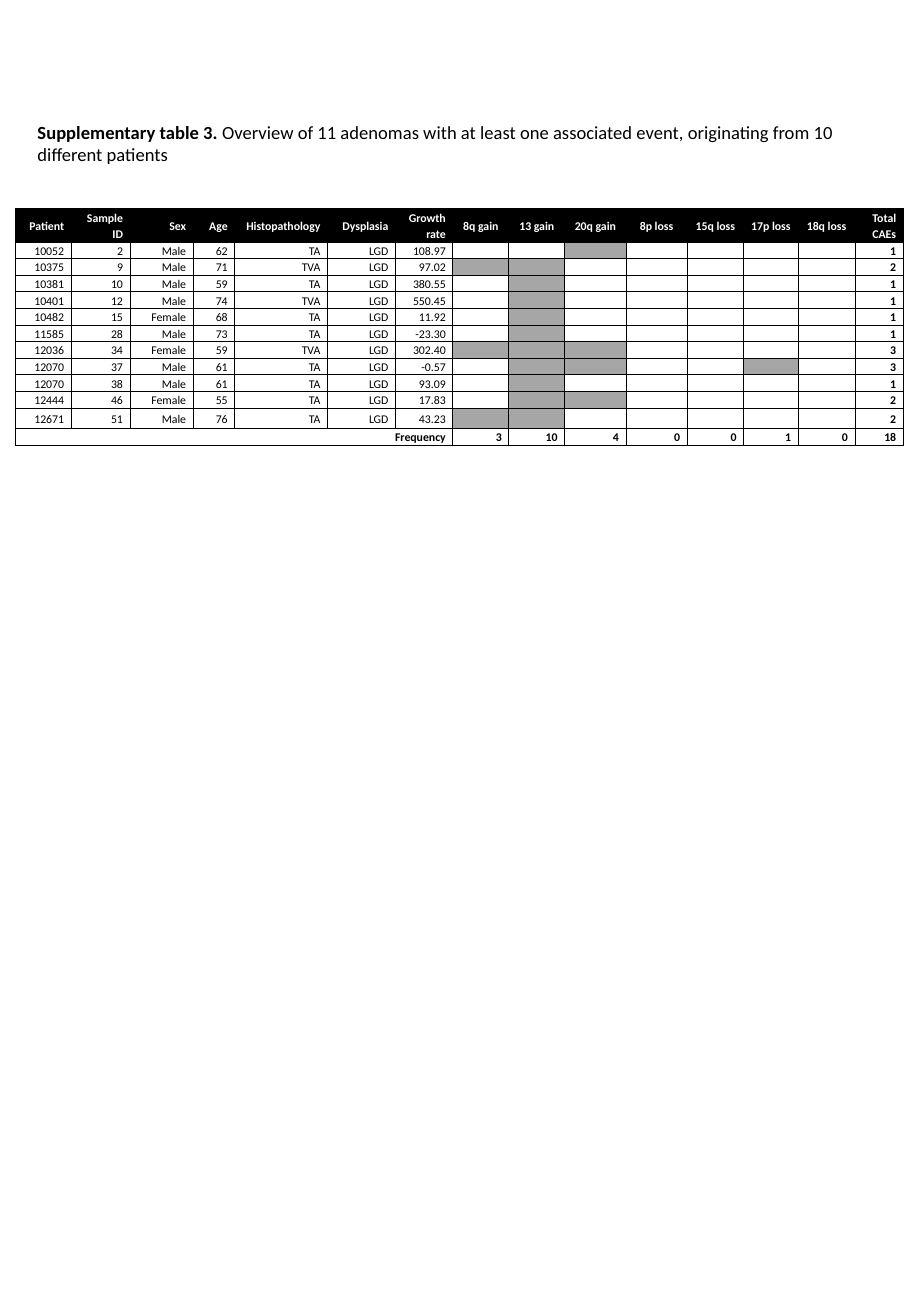
from lxml import etree
from pptx import Presentation
from pptx.dml.color import RGBColor
from pptx.enum.text import MSO_ANCHOR, MSO_AUTO_SIZE, PP_ALIGN
from pptx.oxml.ns import qn
from pptx.util import Cm, Pt

MIDDLE = MSO_ANCHOR.MIDDLE
NO_AUTOFIT = MSO_AUTO_SIZE.NONE
LEFT, CENTER, RIGHT = PP_ALIGN.LEFT, PP_ALIGN.CENTER, PP_ALIGN.RIGHT
TITLE_ONLY = 5

FONT = "Calibri"
BLACK, WHITE, GREY = "000000", "FFFFFF", "A6A6A6"

TITLE = [
    ("Supplementary table 3.", True),
    (" Overview of 11 adenomas with at least one associated event,"
     " originating from 10 different patients", False),
]
DETAILS = ["Patient", "Sample ID", "Sex", "Age", "Histopathology", "Dysplasia", "Growth rate"]
EVENTS = ["8q gain", "13 gain", "20q gain", "8p loss", "15q loss", "17p loss", "18q loss"]
TOTAL = "Total CAEs"
ADENOMAS = [
    (("10052", "2", "Male", "62", "TA", "LGD", "108.97"), ["20q gain"]),
    (("10375", "9", "Male", "71", "TVA", "LGD", "97.02"), ["8q gain", "13 gain"]),
    (("10381", "10", "Male", "59", "TA", "LGD", "380.55"), ["13 gain"]),
    (("10401", "12", "Male", "74", "TVA", "LGD", "550.45"), ["13 gain"]),
    (("10482", "15", "Female", "68", "TA", "LGD", "11.92"), ["13 gain"]),
    (("11585", "28", "Male", "73", "TA", "LGD", "-23.30"), ["13 gain"]),
    (("12036", "34", "Female", "59", "TVA", "LGD", "302.40"), ["8q gain", "13 gain", "20q gain"]),
    (("12070", "37", "Male", "61", "TA", "LGD", "-0.57"), ["13 gain", "20q gain", "17p loss"]),
    (("12070", "38", "Male", "61", "TA", "LGD", "93.09"), ["13 gain"]),
    (("12444", "46", "Female", "55", "TA", "LGD", "17.83"), ["13 gain", "20q gain"]),
    (("12671", "51", "Male", "76", "TA", "LGD", "43.23"), ["8q gain", "13 gain"]),
]
COLUMN_WIDTHS = [1.17, 1.23, 1.32, 0.87, 1.94, 1.42, 1.2, 1.17, 1.17, 1.28, 1.28, 1.18, 1.14,
                 1.19, 1.01]
HEADER_HEIGHT, ROW_HEIGHT, LAST_ADENOMA_HEIGHT = 0.7, 0.34, 0.43


def color(value):
    return RGBColor.from_string(value)


def add_borders(cell):
    properties = cell._tc.get_or_add_tcPr()
    for side in ("a:lnL", "a:lnR", "a:lnT", "a:lnB"):
        line = etree.SubElement(properties, qn(side), w=str(Pt(0.5)))
        fill = etree.SubElement(line, qn("a:solidFill"))
        etree.SubElement(fill, qn("a:srgbClr"), val=BLACK)


def format_cell(cell, text, fill, bold, font_color, alignment):
    add_borders(cell)
    if fill:
        cell.fill.solid()
        cell.fill.fore_color.rgb = color(fill)
    else:
        cell.fill.background()
    cell.margin_left = cell.margin_right = Cm(0.15)
    cell.margin_top = cell.margin_bottom = 0
    cell.vertical_anchor = MIDDLE
    paragraph = cell.text_frame.paragraphs[0]
    paragraph.alignment = alignment
    paragraph.line_spacing = 1.15
    font = paragraph.font
    font.name, font.size, font.bold = FONT, Pt(7), bold
    font.color.rgb = color(font_color)
    if text:
        paragraph.add_run().text = text
    else:
        paragraph._p.get_or_add_endParaRPr().set("sz", "700")


def add_title(slide):
    title = slide.shapes.title
    title.left, title.top, title.width, title.height = Cm(0.53), Cm(2.39), Cm(17.8), Cm(1.19)
    frame = title.text_frame
    frame.auto_size = NO_AUTOFIT
    frame.word_wrap = True
    frame.vertical_anchor = MIDDLE
    paragraph = frame.paragraphs[0]
    paragraph.alignment = LEFT
    paragraph.font.name, paragraph.font.size = FONT, Pt(11)
    paragraph.font.color.rgb = color(BLACK)
    for text, bold in TITLE:
        run = paragraph.add_run()
        run.text = text
        run.font.bold = bold


def table_rows():
    rows = [DETAILS + EVENTS + [TOTAL]]
    for details, events in ADENOMAS:
        rows.append([*details, *[""] * len(EVENTS), str(len(events))])
    counts = [sum(event in events for _, events in ADENOMAS) for event in EVENTS]
    frequency = ["Frequency"] + [""] * (len(DETAILS) - 1)
    rows.append(frequency + [str(count) for count in counts + [sum(counts)]])
    return rows


def add_adenoma_table(slide):
    rows = table_rows()
    headings = rows[0]
    last_row = len(rows) - 1
    heights = [HEADER_HEIGHT] + [ROW_HEIGHT] * last_row
    heights[last_row - 1] = LAST_ADENOMA_HEIGHT
    table = slide.shapes.add_table(
        len(rows), len(headings), Cm(0.32), Cm(4.36),
        Cm(sum(COLUMN_WIDTHS)), Cm(sum(heights))).table
    table.first_row = table.horz_banding = False
    for column, width in zip(table.columns, COLUMN_WIDTHS):
        column.width = Cm(width)
    for row, height in zip(table.rows, heights):
        row.height = Cm(height)
    table.cell(last_row, 0).merge(table.cell(last_row, len(DETAILS) - 1))

    for row_index, row in enumerate(rows):
        is_header = row_index == 0
        is_adenoma = 0 < row_index < last_row
        events = ADENOMAS[row_index - 1][1] if is_adenoma else []
        for column_index, (heading, text) in enumerate(zip(headings, row)):
            fill = BLACK if is_header else GREY if heading in events else None
            bold = not is_adenoma or heading == TOTAL
            alignment = CENTER if is_header and heading in EVENTS else RIGHT
            format_cell(table.cell(row_index, column_index), text, fill, bold,
                        WHITE if is_header else BLACK, alignment)


def main():
    presentation = Presentation()
    presentation.slide_width, presentation.slide_height = Cm(19.05), Cm(27.51)
    slide = presentation.slides.add_slide(presentation.slide_layouts[TITLE_ONLY])
    add_title(slide)
    add_adenoma_table(slide)
    presentation.save("out.pptx")


if __name__ == "__main__":
    main()
